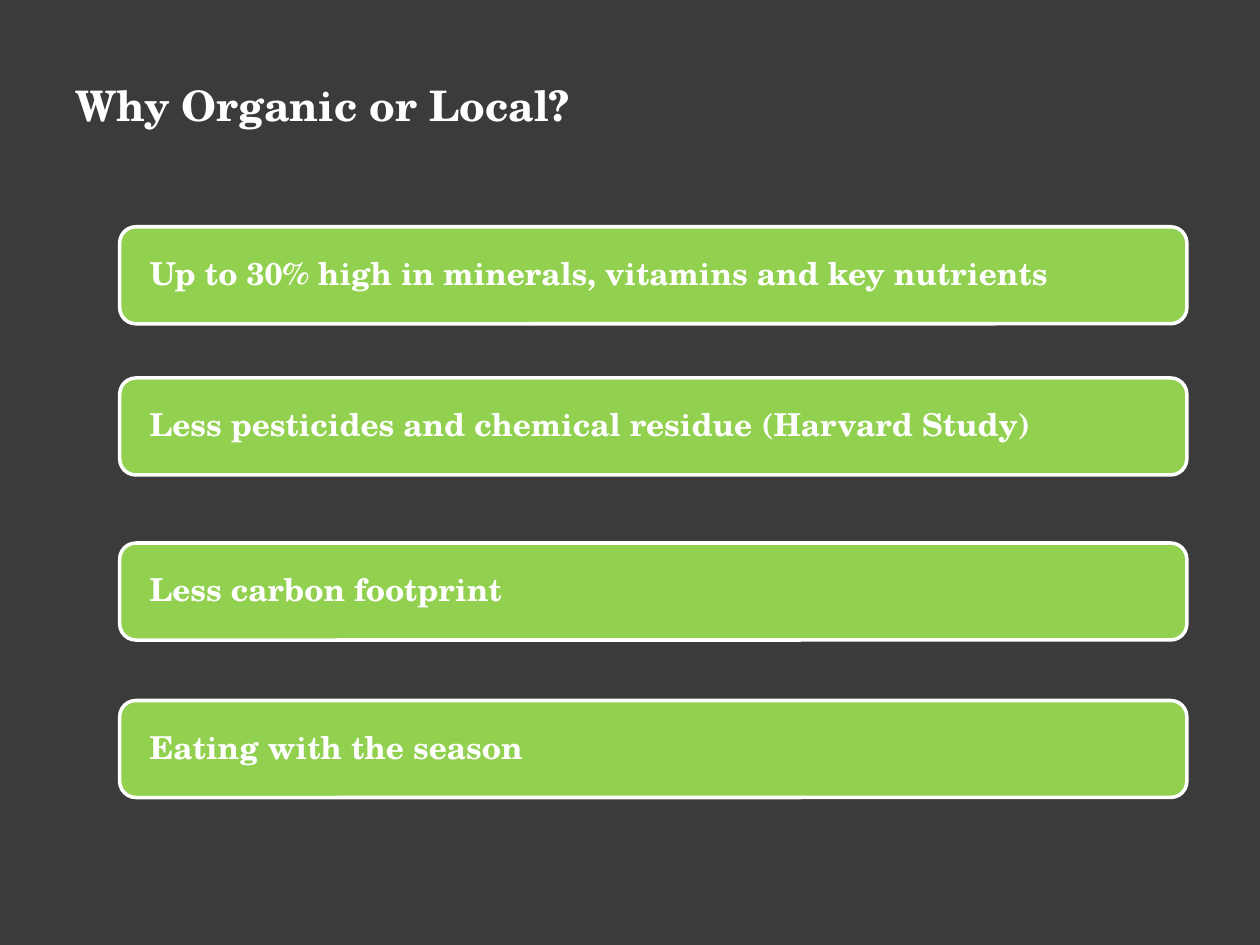
import pptx
import pptx.dml.color
import pptx.enum.shapes
import pptx.enum.text
import pptx.util

WIDTH, HEIGHT = 10, 7.5
FONT = "TeX Gyre Schola"
COLOURS = {"background": "3B3B3B", "bar": "92D050", "text": "FFFFFF"}
BAR_LEFT, BAR_WIDTH, BAR_HEIGHT = 0.95, 8.47, 0.77
REASONS = [
    (1.8, "Up to 30% high in minerals, vitamins and key nutrients"),
    (3, "Less pesticides and chemical residue (Harvard Study)"),
    (4.31, "Less carbon footprint"),
    (5.56, "Eating with the season"),
]


def colour(name):
    return pptx.dml.color.RGBColor.from_string(COLOURS[name])


def inches(*lengths):
    return [pptx.util.Inches(length) for length in lengths]


def write(box, text, *, size, anchor, margins, line_spacing=1.0):
    """Put one bold, left-aligned paragraph into a shape."""
    frame = box.text_frame
    frame.word_wrap = True
    frame.auto_size = pptx.enum.text.MSO_AUTO_SIZE.NONE
    frame.vertical_anchor = anchor
    side, edge = inches(*margins)
    frame.margin_left = frame.margin_right = side
    frame.margin_top = frame.margin_bottom = edge
    para = frame.paragraphs[0]
    para.alignment = pptx.enum.text.PP_ALIGN.LEFT
    para.line_spacing = line_spacing
    span = para.add_run()
    span.text = text
    span.font.name = FONT
    span.font.size = pptx.util.Pt(size)
    span.font.bold = True
    span.font.color.rgb = colour("text")


def add_title(page, text):
    title = page.shapes.title
    title.left, title.top, title.width, title.height = inches(0.5, 0.58, 8.92, 1.58)
    write(title, text, size=24, margins=(0.1, 0.05),
          anchor=pptx.enum.text.MSO_ANCHOR.TOP)


def add_bar(page, top, text):
    bar = page.shapes.add_shape(
        pptx.enum.shapes.MSO_SHAPE.ROUNDED_RECTANGLE,
        *inches(BAR_LEFT, top, BAR_WIDTH, BAR_HEIGHT))
    bar.shadow.inherit = False
    bar.fill.solid()
    bar.fill.fore_color.rgb = colour("bar")
    bar.line.color.rgb = colour("text")
    bar.line.width = pptx.util.Pt(2)
    write(bar, text, size=18, margins=(0.2, 0), line_spacing=0.9,
          anchor=pptx.enum.text.MSO_ANCHOR.MIDDLE)


def main():
    deck = pptx.Presentation()
    deck.slide_width, deck.slide_height = inches(WIDTH, HEIGHT)
    page = deck.slides.add_slide(deck.slide_layouts.get_by_name("Title Only"))
    page.background.fill.solid()
    page.background.fill.fore_color.rgb = colour("background")
    add_title(page, "Why Organic or Local?")
    for top, reason in REASONS:
        add_bar(page, top, reason)
    deck.save("out.pptx")


if __name__ == "__main__":
    main()
